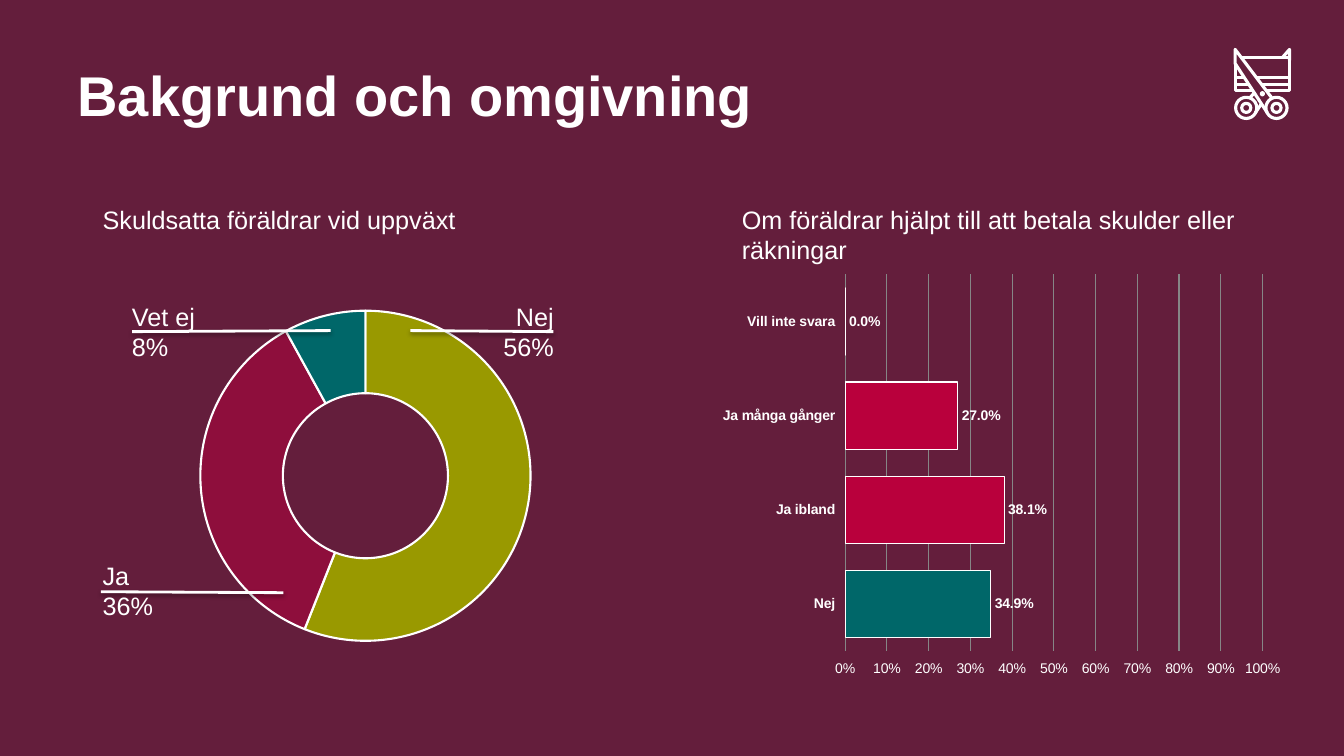
from lxml import etree
from pptx import Presentation
from pptx.chart.data import CategoryChartData
from pptx.dml.color import RGBColor
from pptx.enum.chart import XL_CHART_TYPE, XL_LABEL_POSITION
from pptx.enum.shapes import MSO_CONNECTOR, MSO_SHAPE
from pptx.enum.text import MSO_ANCHOR, PP_ALIGN
from pptx.oxml import parse_xml
from pptx.oxml.ns import qn
from pptx.util import Inches, Pt

DOUGHNUT, BARS = XL_CHART_TYPE.DOUGHNUT, XL_CHART_TYPE.BAR_CLUSTERED
OUTSIDE_END = XL_LABEL_POSITION.OUTSIDE_END
STRAIGHT, OVAL = MSO_CONNECTOR.STRAIGHT, MSO_SHAPE.OVAL
TOP, BOTTOM = MSO_ANCHOR.TOP, MSO_ANCHOR.BOTTOM
LEFT, RIGHT = PP_ALIGN.LEFT, PP_ALIGN.RIGHT

FONT = "Arial"
COLORS = {"wine": "641E3C", "white": "FFFFFF", "olive": "999900",
          "red": "B9003C", "teal": "006769", "grid": "868686"}
SLIDE_W, SLIDE_H = Inches(13.33), Inches(7.5)

# Boxes are left, top, width, height in percent of the slide's size.
TITLE_BOX = (5.03, 4, 89.57, 13.6)
ICON_BOX = (91.75, 6.27, 4.35, 9.6)
PARENTS_BOX = (6.9, 26.4, 41.7, 60.27)
HELP_BOX = (52.96, 26.4, 43.14, 64.13)


def color(name):
    return RGBColor.from_string(COLORS[name])


def across(share):
    return round(SLIDE_W * share / 100)


def down(share):
    return round(SLIDE_H * share / 100)


def place(box, dx, dy, w, h):
    """Slide position of a part whose offset is counted from the box's corner."""
    return across(box[0] + dx), down(box[1] + dy), across(w), down(h)


def set_font(font, size, bold=False):
    font.name, font.size, font.bold = FONT, Pt(size), bold
    font.color.rgb = color("white")


def set_line(line, width):
    line.color.rgb = color("white")
    line.width = Pt(width)


def add_text(s, at, lines, size=18, bold=False, align=LEFT, anchor=TOP):
    tf = s.shapes.add_textbox(*at).text_frame
    tf.word_wrap, tf.vertical_anchor = True, anchor
    for i, line in enumerate(lines):
        p = tf.add_paragraph() if i else tf.paragraphs[0]
        p.alignment = align
        r = p.add_run()
        r.text = line
        set_font(r.font, size, bold)


def add_leader(s, box, start, end):
    x1, y1, x2, y2 = (*place(box, *start, 0, 0)[:2], *place(box, *end, 0, 0)[:2])
    leader = s.shapes.add_connector(STRAIGHT, x1, y1, x2, y2)
    set_line(leader.line, 2)
    effects = etree.SubElement(leader._element.spPr, qn("a:effectLst"))
    shadow = etree.SubElement(effects, qn("a:outerShdw"), blurRad=str(Pt(3.1)),
                              dist=str(Pt(1.6)), dir="5400000", rotWithShape="0")
    black = etree.SubElement(shadow, qn("a:srgbClr"), val="000000")
    etree.SubElement(black, qn("a:alpha"), val="38000")


def add_plain_chart(s, kind, at, values, number_format, fills, line_width, layout):
    """Chart of one series with a colour per point and a fixed inner plot area."""
    data = CategoryChartData(number_format=number_format)
    data.categories = list(values)
    data.add_series("Series 1", list(values.values()))
    chart = s.shapes.add_chart(kind, *at, data).chart
    chart.has_legend = chart.has_title = False
    set_font(chart.font, 10)
    plot = chart.plots[0]
    plot.vary_by_categories = False
    for i, name in enumerate(fills):
        fmt = plot.series[0].points[i].format
        fmt.fill.solid()
        fmt.fill.fore_color.rgb = color(name)
        set_line(fmt.line, line_width)
    area = chart._chartSpace.chart.plotArea
    for old in area.findall(qn("c:layout")):
        area.remove(old)
    fixed = parse_xml('<c:layout xmlns:c="http://schemas.openxmlformats.org/'
                      'drawingml/2006/chart"><c:manualLayout/></c:layout>')
    settings = [("layoutTarget", "inner"), ("xMode", "edge"), ("yMode", "edge"),
                *zip("xywh", layout)]
    for tag, val in settings:
        etree.SubElement(fixed[0], qn(f"c:{tag}"), val=str(val))
    area.insert(0, fixed)
    return chart


def add_title(s, box):
    add_text(s, place(box, 0, 0, *box[2:]), ["Bakgrund och omgivning"],
             size=40, bold=True, anchor=BOTTOM)


def add_scissors_icon(s, box):
    """Scissors cutting a card, drawn on a grid of 58 by 72 cells."""
    left, top, w, h = place(box, 0, 0, *box[2:])
    cell_x, cell_y = w / 58, h / 72
    strokes = [
        [(8, 10), (56, 10), (56, 43), (34, 43)],
        [(2, 16), (2, 43), (20, 43)],
        [(2, 30), (10, 30)], [(23, 30), (56, 30)],
        [(2, 37), (15, 37)], [(29, 37), (56, 37)],
        [(34, 65), (2, 16), (2, 2), (39, 51)],
        [(56, 13), (56, 2), (49, 10)],
        [(21, 45), (16, 51)], [(28, 56), (22, 65)],
    ]
    for (x, y), *rest in strokes:
        builder = s.shapes.build_freeform(x, y, scale=(cell_x, cell_y))
        builder.add_line_segments(rest, close=False)
        stroke = builder.convert_to_shape(left, top)
        stroke.fill.background()
        set_line(stroke.line, 2.25)
        stroke.shadow.inherit = False
    rings = [(x, 60, r) for x in (13, 43) for r in (10.5, 4.5)]
    for x, y, r in [*rings, (29, 46, 1)]:
        ring = s.shapes.add_shape(
            OVAL, round(left + (x - r) * cell_x), round(top + (y - r) * cell_y),
            round(2 * r * cell_x), round(2 * r * cell_y))
        ring.fill.background()
        set_line(ring.line, 2.25)
        ring.shadow.inherit = False


def add_parents_panel(s, box):
    shares = {"Nej": 56, "Ja": 36, "Vet ej": 8}
    chart = add_plain_chart(s, DOUGHNUT, place(box, 0.23, 12.8, 40.13, 47.47),
                            shares, "General", ["olive", "red", "teal"], 1.5,
                            (0.19, 0.04, 0.62, 0.92))
    plot = chart.plots[0]
    plot.vary_by_categories = True
    plot._element.find(qn("c:holeSize")).set("val", "50")
    ja_fill = plot.series[0].points[1].format.fill
    etree.SubElement(ja_fill._xPr.find(qn("a:solidFill"))[0], qn("a:alpha"), val="50000")

    add_text(s, place(box, 0, 0, box[2], 5.33), ["Skuldsatta föräldrar vid uppväxt"])
    labels = [
        ("Ja", (0, 47.07, 16.5), LEFT, (0.6, 51.87), (14.18, 52)),
        ("Nej", (27.16, 12.8, 7.88), RIGHT, (23.63, 17.33), (34.28, 17.47)),
        ("Vet ej", (2.18, 12.8, 9.45), LEFT, (2.93, 17.47), (17.7, 17.33)),
    ]
    for answer, at, align, start, end in labels:
        add_leader(s, box, start, end)
        add_text(s, place(box, *at, 9.47), [answer, f"{shares[answer]}%"], align=align)


def add_help_panel(s, box):
    shares = {"Nej": 0.349, "Ja ibland": 0.381, "Ja många gånger": 0.27,
              "Vill inte svara": 0}
    chart = add_plain_chart(s, BARS, place(box, 0, 8.8, box[2], 55.33),
                            shares, "0.0%", ["teal", "red", "red", "red"], 0.75,
                            (0.23, 0.02, 0.72, 0.9))
    plot = chart.plots[0]
    plot.gap_width = 40
    plot.has_data_labels = True
    labels = plot.data_labels
    labels.show_value, labels.position = True, OUTSIDE_END
    labels.number_format, labels.number_format_is_linked = "0.0%", False
    set_font(labels.font, 10, True)
    for axis, bold in ((chart.category_axis, True), (chart.value_axis, False)):
        set_font(axis.tick_labels.font, 10, bold)
        axis.format.line.fill.background()
    chart.category_axis.has_major_gridlines = False
    axis = chart.value_axis
    axis.minimum_scale, axis.maximum_scale, axis.major_unit = 0, 1, 0.1
    axis.tick_labels.number_format = "0%"
    axis.tick_labels.number_format_is_linked = False
    axis.has_major_gridlines = True
    axis.major_gridlines.format.line.color.rgb = color("grid")
    axis.major_gridlines.format.line.width = Pt(0.75)
    add_text(s, place(box, 1.5, 0, 38.56, 9.47),
             ["Om föräldrar hjälpt till att betala skulder eller räkningar"])


def main():
    prs = Presentation()
    prs.slide_width, prs.slide_height = SLIDE_W, SLIDE_H
    s = prs.slides.add_slide(prs.slide_layouts[6])
    s.background.fill.solid()
    s.background.fill.fore_color.rgb = color("wine")
    add_title(s, TITLE_BOX)
    add_scissors_icon(s, ICON_BOX)
    add_parents_panel(s, PARENTS_BOX)
    add_help_panel(s, HELP_BOX)
    prs.save("out.pptx")


if __name__ == "__main__":
    main()
